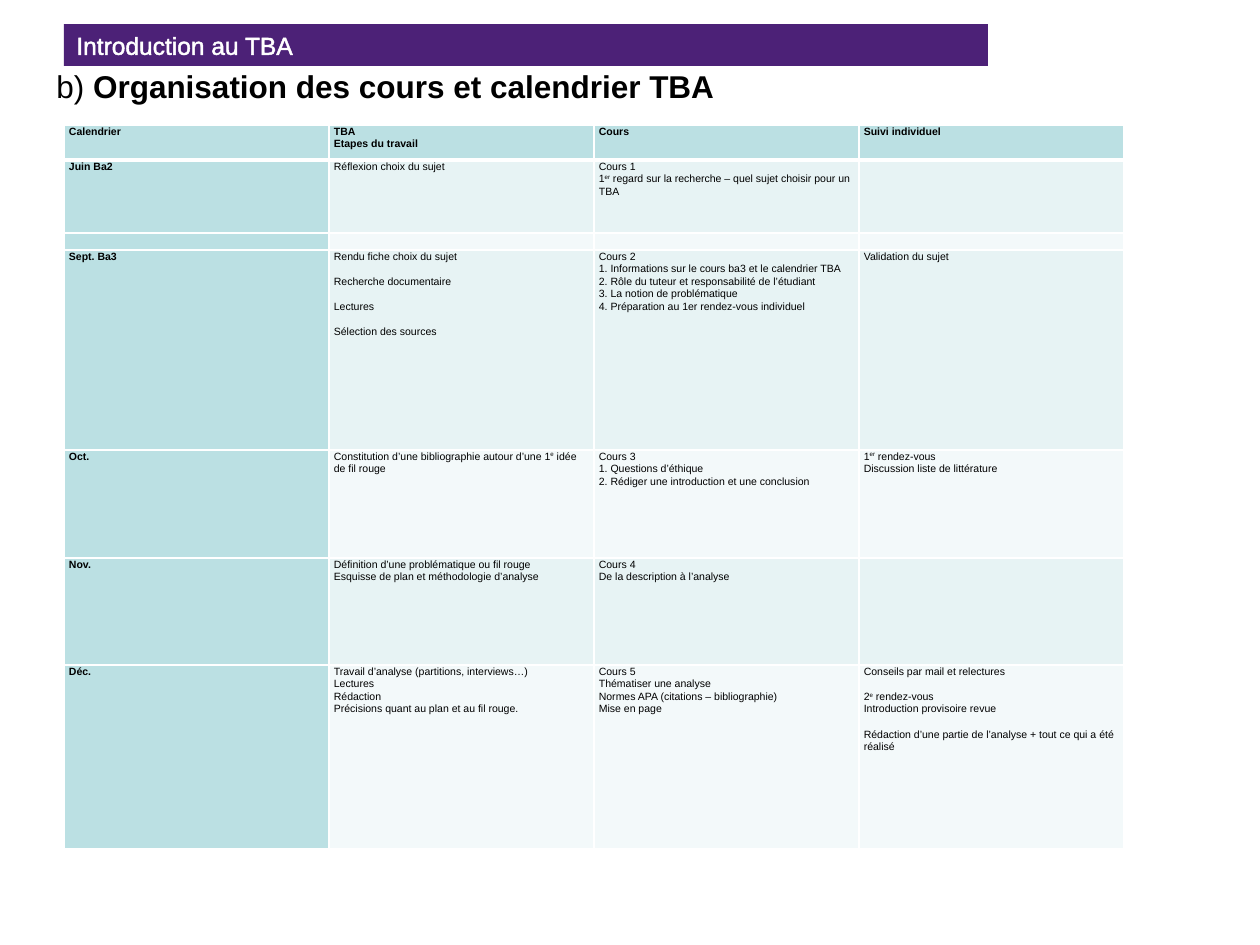
from lxml import etree
from pptx import Presentation
from pptx.dml.color import RGBColor
from pptx.enum.shapes import MSO_SHAPE
from pptx.enum.text import MSO_ANCHOR, MSO_AUTO_SIZE, PP_ALIGN
from pptx.oxml.ns import qn
from pptx.util import Emu, Pt

RECTANGLE = MSO_SHAPE.RECTANGLE
MIDDLE = MSO_ANCHOR.MIDDLE
GROW = MSO_AUTO_SIZE.SHAPE_TO_FIT_TEXT
LEFT = PP_ALIGN.LEFT
EMU_PER_PX = 914400 // 126
FONT = "Arial"
PURPLE, WHITE, BLACK = "4C2177", "FFFFFF", "000000"
TEAL, BAND_DARK, BAND_LIGHT = "BBE0E3", "E7F3F4", "F3F9FA"
CELL_SIZE = 6
LINE_SPACING = 1.07
GAP = "~"
GAP_HEIGHT = Pt(7.2)
ROW_HEIGHTS = [35, 73, 17, 200, 108, 107, 184]
COLUMN_WIDTH = 265
ROWS = [
    [["Calendrier"], ["TBA", "Etapes du travail"], ["Cours"], ["Suivi individuel"]],
    [
        ["Juin Ba2"],
        ["Réflexion choix du sujet"],
        ["Cours 1", "1^er^ regard sur la recherche – quel sujet choisir pour un TBA"],
        [],
    ],
    [[], [], [], []],
    [
        ["Sept. Ba3"],
        ["Rendu fiche choix du sujet", "~Recherche documentaire", "~Lectures", "~Sélection des sources"],
        [
            "Cours 2",
            "1. Informations sur le cours ba3 et le calendrier TBA",
            "2. Rôle du tuteur et responsabilité de l’étudiant",
            "3. La notion de problématique",
            "4. Préparation au 1er rendez-vous individuel",
        ],
        ["Validation du sujet"],
    ],
    [
        ["Oct."],
        ["Constitution d’une bibliographie autour d’une 1^e^ idée de fil rouge"],
        ["Cours 3", "1. Questions d’éthique", "2. Rédiger une introduction et une conclusion"],
        ["1^er^ rendez-vous", "Discussion liste de littérature"],
    ],
    [
        ["Nov."],
        ["Définition d’une problématique ou fil rouge", "Esquisse de plan et méthodologie d’analyse"],
        ["Cours 4", "De la description à l’analyse"],
        [],
    ],
    [
        ["Déc."],
        [
            "Travail d’analyse (partitions, interviews…)",
            "Lectures",
            "Rédaction",
            "Précisions quant au plan et au fil rouge.",
        ],
        ["Cours 5", "Thématiser une analyse", "Normes APA (citations – bibliographie)", "Mise en page"],
        [
            "Conseils par mail et relectures",
            "~2^e^ rendez-vous",
            "Introduction provisoire revue",
            "~Rédaction d’une partie de l’analyse + tout ce qui a été réalisé",
        ],
    ],
]


def px(value):
    """Turn pixels into EMU."""
    return Emu(value * EMU_PER_PX)


def color(hex_value):
    """Turn a hex string into a colour."""
    return RGBColor.from_string(hex_value)


def apply(target, formats):
    """Set attributes of an object from a dict."""
    for name, value in formats.items():
        setattr(target, name, value)


def add_run(paragraph, text, size, hex_value, bold=False):
    """Add a formatted run to a paragraph."""
    run = paragraph.add_run()
    run.text = text
    apply(run.font, {"name": FONT, "size": Pt(size), "bold": bold})
    run.font.color.rgb = color(hex_value)
    return run


def make_line(parent, tag, width, hex_value):
    """Append a solid line element to a properties element."""
    line = etree.SubElement(parent, qn(tag), w=str(Pt(width)))
    fill = etree.SubElement(line, qn("a:solidFill"))
    etree.SubElement(fill, qn("a:srgbClr"), val=hex_value)
    return line


def add_banner(slide, box, text):
    """Draw the purple banner with its outlined text."""
    shape = slide.shapes.add_shape(RECTANGLE, *map(px, box))
    shape.shadow.inherit = False
    shape.fill.solid()
    shape.fill.fore_color.rgb = color(PURPLE)
    shape.line.fill.background()
    apply(shape.text_frame, {"word_wrap": True, "vertical_anchor": MIDDLE})
    paragraph = shape.text_frame.paragraphs[0]
    paragraph.alignment = LEFT
    properties = add_run(paragraph, text, 14, WHITE).font._element
    properties.insert(0, make_line(properties, "a:ln", 0.75, WHITE))


def add_heading(slide, box, label, text):
    """Write the heading with a plain label and bold text."""
    frame = slide.shapes.add_textbox(*map(px, box)).text_frame
    apply(frame, {"word_wrap": True, "auto_size": GROW})
    add_run(frame.paragraphs[0], label, 18, BLACK)
    add_run(frame.paragraphs[0], text, 18, BLACK, True)


def write_cell(cell, lines, bold):
    """Write lines in a cell, with ~ for a gap above and ^ around superscripts."""
    apply(cell, {"margin_left": px(5), "margin_right": px(5), "margin_top": 0, "margin_bottom": 0})
    frame = cell.text_frame
    if not lines:
        frame.paragraphs[0]._p.get_or_add_endParaRPr().set("sz", str(CELL_SIZE * 100))
    for index, line in enumerate(lines):
        paragraph = frame.add_paragraph() if index else frame.paragraphs[0]
        paragraph.line_spacing = LINE_SPACING
        if line.startswith(GAP):
            paragraph.space_before = GAP_HEIGHT
        for part, text in enumerate(line.lstrip(GAP).split("^")):
            run = add_run(paragraph, text, CELL_SIZE, BLACK, bold)
            if part % 2:
                run.font._element.set("baseline", "30000")


def paint_cell(cell, row, column):
    """Fill a cell by its row band and give it white borders."""
    band = BAND_DARK if row % 2 else BAND_LIGHT
    cell.fill.solid()
    cell.fill.fore_color.rgb = color(TEAL if row == 0 or column == 0 else band)
    properties = cell._tc.get_or_add_tcPr()
    widths = {"a:lnL": 1, "a:lnR": 1, "a:lnT": 3 if row == 1 else 1, "a:lnB": 3 if row == 0 else 1}
    for position, (tag, width) in enumerate(widths.items()):
        properties.insert(position, make_line(properties, tag, width, WHITE))


def add_calendar(slide, left, top):
    """Build the course calendar table."""
    columns = len(ROWS[0])
    box = (left, top, COLUMN_WIDTH * columns, sum(ROW_HEIGHTS))
    table = slide.shapes.add_table(len(ROWS), columns, *map(px, box)).table
    apply(table, {"first_row": False, "horz_banding": False})
    for column in table.columns:
        column.width = px(COLUMN_WIDTH)
    for row, (height, texts) in enumerate(zip(ROW_HEIGHTS, ROWS)):
        table.rows[row].height = px(height)
        for column, lines in enumerate(texts):
            cell = table.cell(row, column)
            write_cell(cell, lines, row == 0 or column == 0)
            paint_cell(cell, row, column)


def main():
    """Build and save the presentation."""
    presentation = Presentation()
    apply(presentation, {"slide_width": px(1260), "slide_height": px(945)})
    slide = presentation.slides.add_slide(presentation.slide_layouts[6])
    add_banner(slide, (64, 24, 924, 42), "Introduction au TBA")
    add_heading(slide, (44, 61, 1123, 51), "b) ", "Organisation des cours et calendrier TBA")
    add_calendar(slide, 64, 125)
    presentation.save("out.pptx")


if __name__ == "__main__":
    main()
